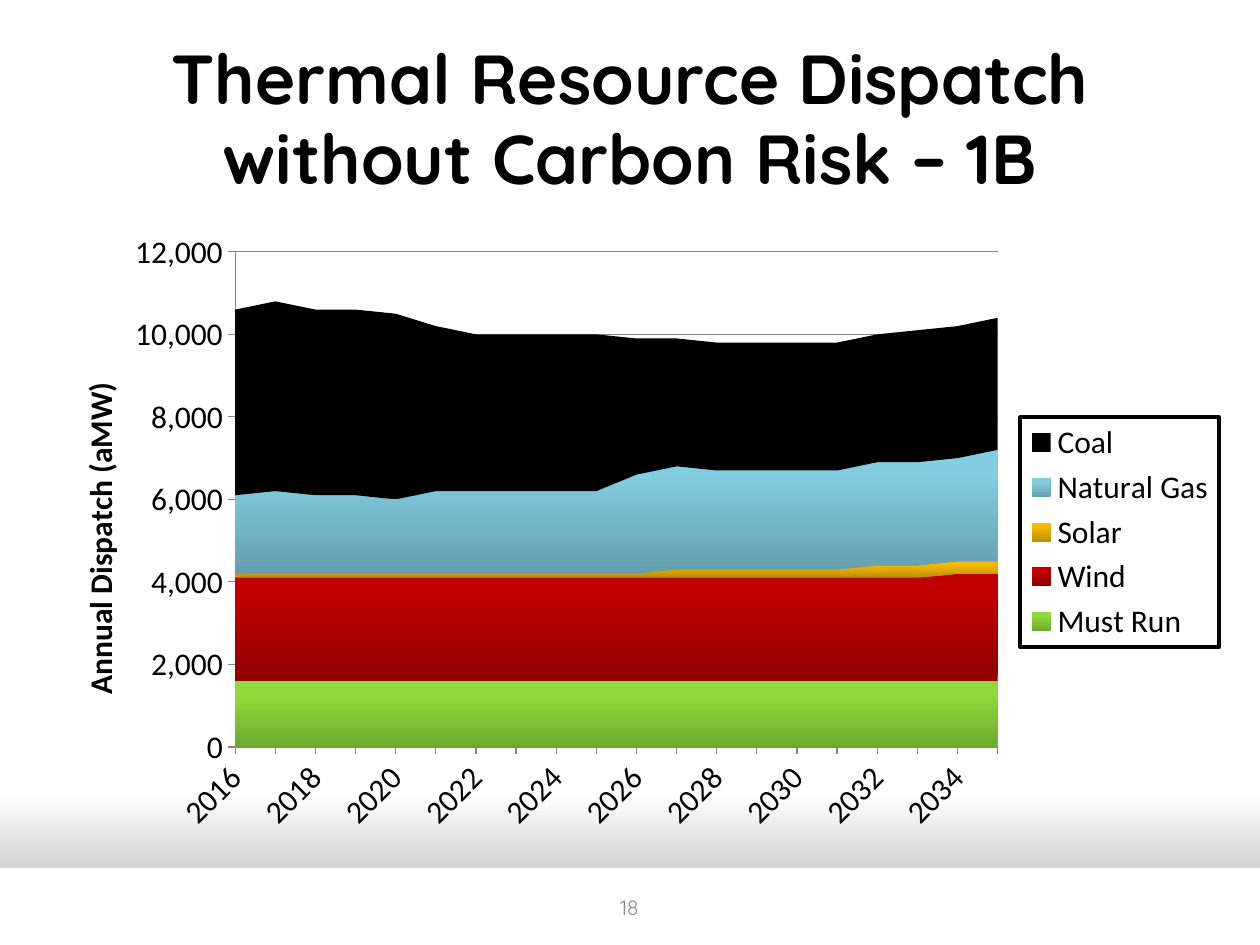
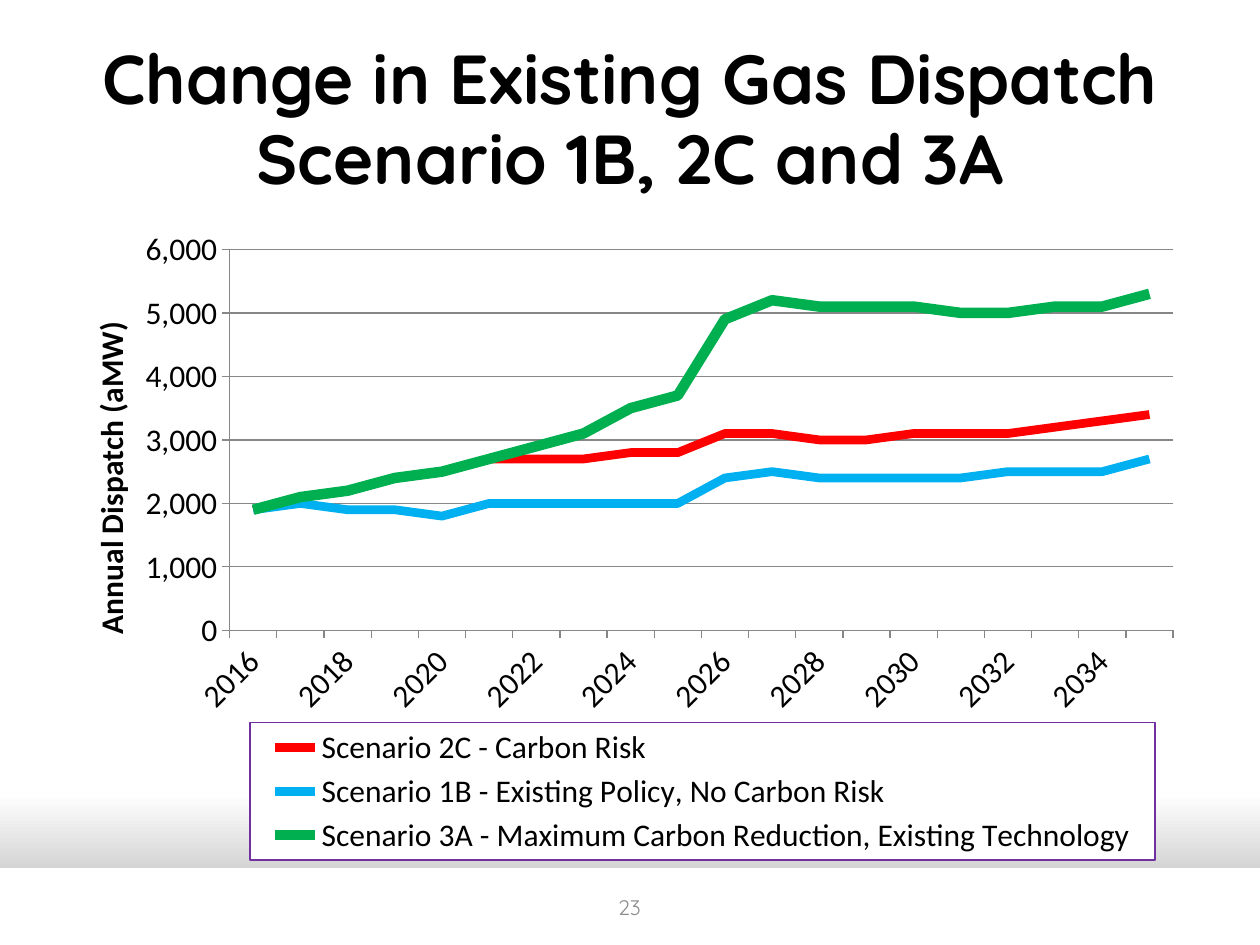
from lxml import etree
from pptx import Presentation
from pptx import util as u
from pptx.chart import data as chart_data
from pptx.dml.color import RGBColor
from pptx.enum import chart as ch, shapes, text
from pptx.oxml.ns import qn

COLORS = {
    "black": "000000", "white": "FFFFFF", "shade": "A6A6A6",
    "number": "8C8C8C", "grid": "878787", "purple": "7030A0",
    "red": "FF0000", "blue": "00B0F0", "green": "00B050",
    "run_dark": "6DAA2D", "run_light": "8EDC3B",
    "wind_dark": "900000", "wind_light": "C00000",
    "solar_dark": "BE8F00", "solar_light": "F7BA00",
    "gas_dark": "659EAC", "gas_light": "83CDE0",
}
TITLE_FONT, CHART_FONT = "Quicksand", "Calibri"
YEARS = [str(year) for year in range(2016, 2036)]
AXIS_TITLE = "Annual Dispatch (aMW)"

# Values shared by the two charts
EXISTING_GAS = [1900, 2000, 1900, 1900, 1800, 2000, 2000, 2000, 2000, 2000,
                2400, 2500, 2400, 2400, 2400, 2400, 2500, 2500, 2500, 2700]

# name, values, gradient from bottom to top
RESOURCES = [
    ("Must Run", [1600] * 20, ("run_dark", "run_light")),
    ("Wind", [2500] * 18 + [2600] * 2, ("wind_dark", "wind_light")),
    ("Solar", [100] * 11 + [200] * 5 + [300] * 4, ("solar_dark", "solar_light")),
    ("Natural Gas", EXISTING_GAS, ("gas_dark", "gas_light")),
    ("Coal", [4500, 4600, 4500, 4500, 4500, 4000, 3800, 3800, 3800, 3800,
              3300, 3100, 3100, 3100, 3100, 3100, 3100, 3200, 3200, 3200],
     ("black", "black")),
]

# name, values, colour, line width
SCENARIOS = [
    ("Scenario 2C - Carbon Risk",
     [1900, 2100, 2200, 2400, 2500, 2700, 2700, 2700, 2800, 2800,
      3100, 3100, 3000, 3000, 3100, 3100, 3100, 3200, 3300, 3400], "red", 5),
    ("Scenario 1B - Existing Policy, No Carbon Risk", EXISTING_GAS, "blue", 5),
    ("Scenario 3A - Maximum Carbon Reduction, Existing Technology",
     [1900, 2100, 2200, 2400, 2500, 2700, 2900, 3100, 3500, 3700,
      4900, 5200, 5100, 5100, 5100, 5000, 5000, 5100, 5100, 5300], "green", 6),
]


def color(name):
    return RGBColor.from_string(COLORS[name])


def area(*lengths):
    return [u.Cm(length) for length in lengths]


def set_all(target, **values):
    for name, value in values.items():
        setattr(target, name, value)


def style_font(font, name, size, tint, bold=False):
    set_all(font, name=name, size=u.Pt(size), bold=bold)
    font.color.rgb = color(tint)


def fill_gradient(fill, angle, stops):
    fill.gradient()
    fill.gradient_angle = angle
    for stop, (position, tint) in zip(fill.gradient_stops, stops):
        stop.position = position
        stop.color.rgb = color(tint)


def add_label(page, place, words, size, tint, bold=False, **frame_values):
    box = page.shapes.add_textbox(*area(*place))
    frame = box.text_frame
    set_all(frame, word_wrap=True, vertical_anchor=text.MSO_ANCHOR.MIDDLE,
            **frame_values)
    para = frame.paragraphs[0]
    para.text = words
    para.alignment = text.PP_ALIGN.CENTER
    for span in para.runs:
        style_font(span.font, TITLE_FONT, size, tint, bold)
    return para


def add_page(deck, title, number):
    page = deck.slides.add_slide(deck.slide_layouts[6])
    fill_gradient(page.background.fill, 270, [(0.84, "white"), (1, "shade")])

    # Footer band with page number
    band = page.shapes.add_shape(shapes.MSO_SHAPE.RECTANGLE,
                                 *area(0, 17.5, 25.4, 1.55))
    band.shadow.inherit = False
    band.fill.solid()
    band.fill.fore_color.rgb = color("white")
    band.line.fill.background()
    add_label(page, (9.73, 17.78, 5.92, 1.02), number, 12, "number")

    # Title
    para = add_label(page, (1.27, 0.76, 22.86, 3.18), title, 39.6, "black", True,
                     margin_top=u.Cm(0.15), margin_bottom=0)
    para.line_spacing = 0.96
    return page


def set_layout(element, index, inner=False, **fractions):
    """Place a chart part by fractions of the chart's size."""
    for old in element.findall(qn("c:layout")):
        element.remove(old)
    layout = etree.Element(qn("c:layout"))
    manual = etree.SubElement(layout, qn("c:manualLayout"))
    if inner:
        etree.SubElement(manual, qn("c:layoutTarget"), val="inner")
    for side in "xy":
        etree.SubElement(manual, qn(f"c:{side}Mode"), val="edge")
    for side, value in fractions.items():
        etree.SubElement(manual, qn(f"c:{side}"), val=str(value))
    element.insert(index, layout)


def style_axes(chart, title_at):
    years, power = chart.category_axis, chart.value_axis
    for axis in (years, power):
        set_all(axis, major_tick_mark=ch.XL_TICK_MARK.OUTSIDE,
                minor_tick_mark=ch.XL_TICK_MARK.NONE)
        style_font(axis.tick_labels.font, CHART_FONT, 18, "black")
        axis.format.line.color.rgb = color("grid")

    # Every second year, slanted
    years.has_major_gridlines = False
    years._element.find(qn("c:txPr")).find(qn("a:bodyPr")).set("rot", "-2700000")
    skip = etree.Element(qn("c:tickLblSkip"), val="2")
    years._element.find(qn("c:noMultiLvlLbl")).addprevious(skip)

    # Value scale and its title
    power.has_major_gridlines = True
    power.major_gridlines.format.line.color.rgb = color("grid")
    power.minimum_scale = 0
    set_all(power.tick_labels, number_format="#,##0", number_format_is_linked=False)
    frame = power.axis_title.text_frame
    frame.text = AXIS_TITLE
    frame._txBody.find(qn("a:bodyPr")).set("rot", "-5400000")
    style_font(frame.paragraphs[0].runs[0].font, CHART_FONT, 18, "black", True)
    set_layout(power.axis_title._element, 1, x=title_at[0], y=title_at[1])


def style_legend(chart, place, border, width):
    chart.has_legend = True
    legend = chart.legend
    set_all(legend, position=ch.XL_LEGEND_POSITION.RIGHT, include_in_layout=False)
    style_font(legend.font, CHART_FONT, 18, "black")
    set_layout(legend._element, 1, **dict(zip("xywh", place)))
    frame = etree.Element(qn("c:spPr"))
    line = etree.Element(qn("a:ln"), w=str(u.Pt(width)))
    for parent, tint in ((frame, "white"), (line, border)):
        fill = etree.SubElement(parent, qn("a:solidFill"))
        etree.SubElement(fill, qn("a:srgbClr"), val=COLORS[tint])
    frame.append(line)
    legend._element.find(qn("c:txPr")).addprevious(frame)


def add_dispatch_chart(page, kind, place, rows, plot_at, title_at, maximum, step):
    data = chart_data.CategoryChartData(number_format="#,##0")
    data.categories = YEARS
    for name, values, *_ in rows:
        data.add_series(name, values)
    chart = page.shapes.add_chart(kind, *area(*place), data).chart
    chart.has_title = False
    style_font(chart.font, CHART_FONT, 18, "black")
    chart.plots[0].vary_by_categories = False
    style_axes(chart, title_at)
    set_all(chart.value_axis, maximum_scale=maximum, major_unit=step)
    plot_area = chart._chartSpace.find(".//" + qn("c:plotArea"))
    set_layout(plot_area, 0, inner=True, **dict(zip("xywh", plot_at)))
    return chart


def add_resource_page(deck):
    page = add_page(deck, "Thermal Resource Dispatch without Carbon Risk – 1B", "18")
    chart = add_dispatch_chart(
        page, ch.XL_CHART_TYPE.AREA_STACKED, (0.64, 4.45, 24.13, 12.57), RESOURCES,
        (0.17, 0.05, 0.637, 0.794), (0.034, 0.25), 12000, 2000)
    for series, (_, _, (dark, light)) in zip(chart.plots[0].series, RESOURCES):
        fill_gradient(series.format.fill, 90, [(0, dark), (0.8, light)])
    chart.value_axis._element.find(qn("c:crossBetween")).set("val", "midCat")
    style_legend(chart, (0.826, 0.315, 0.166, 0.369), "black", 2.25)


def add_scenario_page(deck):
    page = add_page(deck, "Change in Existing Gas Dispatch\vScenario 1B, 2C and 3A",
                    "23")
    chart = add_dispatch_chart(
        page, ch.XL_CHART_TYPE.LINE, (1.27, 4.45, 22.86, 12.9), SCENARIOS,
        (0.147, 0.045, 0.832, 0.596), (0.018, 0.15), 6000, 1000)
    for series, (_, _, tint, width) in zip(chart.plots[0].series, SCENARIOS):
        series.smooth = False
        series.marker.style = ch.XL_MARKER_STYLE.NONE
        series.format.line.color.rgb = color(tint)
        series.format.line.width = u.Pt(width)
    style_legend(chart, (0.165, 0.785, 0.798, 0.215), "purple", 0.75)


def main():
    deck = Presentation()
    set_all(deck, slide_width=u.Cm(25.4), slide_height=u.Cm(19.05))
    add_resource_page(deck)
    add_scenario_page(deck)
    deck.save("out.pptx")


if __name__ == "__main__":
    main()
